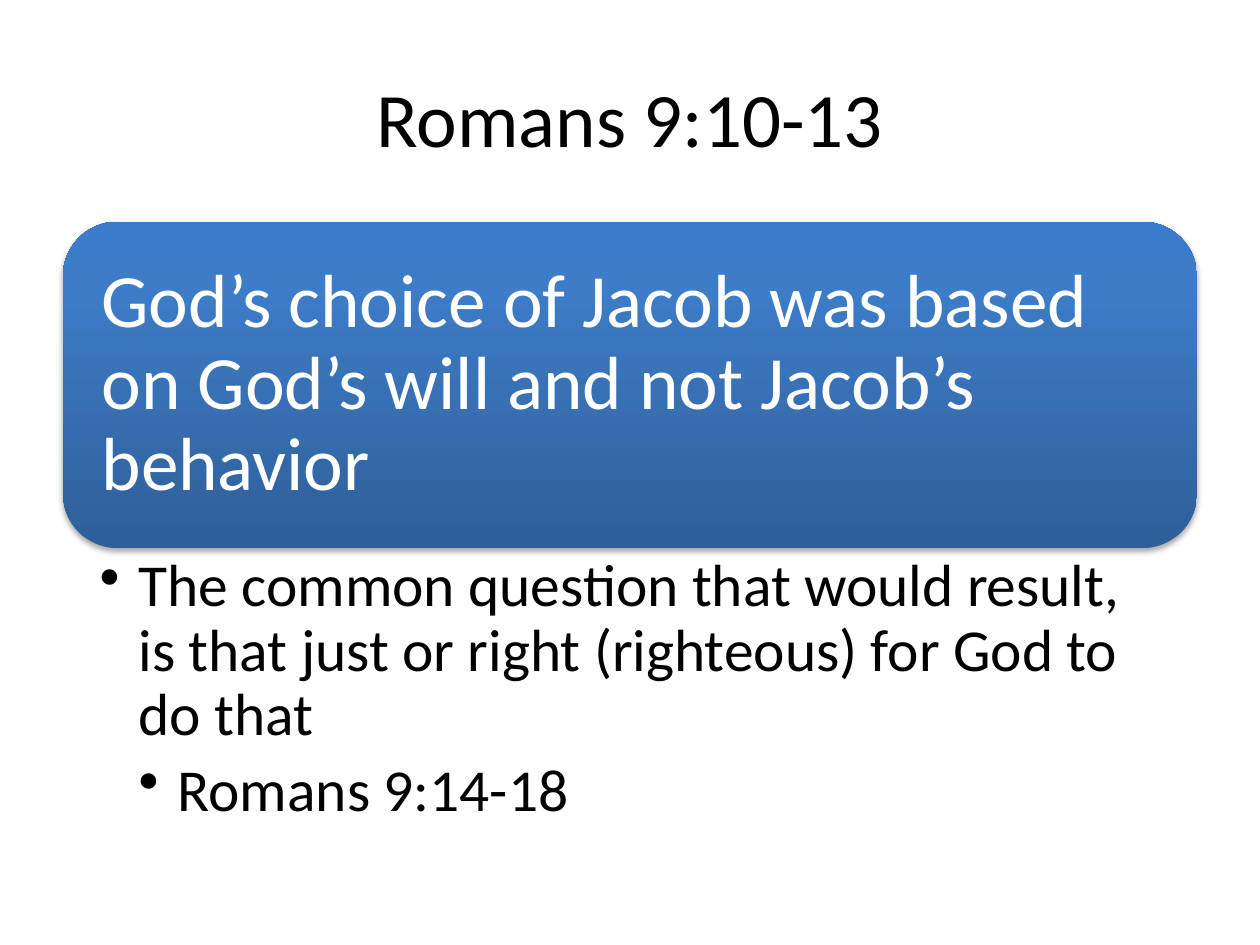
import dataclasses

import lxml.etree
import pptx
import pptx.dml.color
import pptx.enum.shapes
import pptx.enum.text
import pptx.oxml
import pptx.oxml.ns
import pptx.util

Inches, Pt = pptx.util.Inches, pptx.util.Pt
ANCHOR = pptx.enum.text.MSO_ANCHOR
ALIGN = pptx.enum.text.PP_ALIGN
NS = pptx.oxml.ns.nsdecls("a")


@dataclasses.dataclass(frozen=True)
class Theme:
    font: str = "Calibri"
    ink: str = "000000"
    paper: str = "FFFFFF"
    panel_stops: tuple = ((0, "2F5F99"), (80, "3D7CC7"), (100, "3A7CCB"))
    title_size: int = 44
    panel_size: int = 43
    bullet_size: int = 34


def write(p, text, *, font, size, color, align=ALIGN.LEFT, line=None, after=0):
    p.alignment = align
    p.line_spacing = line
    p.space_before, p.space_after = Pt(0), Pt(after)
    r = p.add_run()
    r.text = text
    r.font.name, r.font.size = font, Pt(size)
    r.font.color.rgb = pptx.dml.color.RGBColor.from_string(color)


class Deck:
    """Holds the theme and the current slide; boxes are shares of the slide."""

    def __init__(self, theme):
        self.theme = theme
        self.prs = pptx.Presentation()
        self.prs.slide_width, self.prs.slide_height = Inches(10), Inches(7.5)

    def box(self, x, y, w, h):
        width, height = self.prs.slide_width, self.prs.slide_height
        return [round(n) for n in (x * width, y * height, w * width, h * height)]

    def frame(self, sp, anchor, left, top, right, bottom):
        tf = sp.text_frame
        tf.word_wrap = True
        tf.vertical_anchor = anchor
        tf.margin_left, tf.margin_top = Inches(left), Inches(top)
        tf.margin_right, tf.margin_bottom = Inches(right), Inches(bottom)
        return tf

    def titled_slide(self, text, box):
        t = self.theme
        self.s = self.prs.slides.add_slide(self.prs.slide_layouts[5])
        fill = self.s.background.fill
        fill.solid()
        fill.fore_color.rgb = pptx.dml.color.RGBColor.from_string(t.paper)
        sp = self.s.shapes.title
        sp.left, sp.top, sp.width, sp.height = self.box(*box)
        tf = self.frame(sp, ANCHOR.MIDDLE, 0.1, 0.05, 0.1, 0.05)
        write(tf.paragraphs[0], text, font=t.font, size=t.title_size,
              color=t.ink, align=ALIGN.CENTER)

    def panel(self, text, box):
        """Rounded box with an upward gradient and a soft shadow."""
        t = self.theme
        sp = self.s.shapes.add_shape(
            pptx.enum.shapes.MSO_SHAPE.ROUNDED_RECTANGLE, *self.box(*box))
        sp.shadow.inherit = False
        sp.line.fill.background()
        stops = "".join(
            f'<a:gs pos="{pos * 1000}"><a:srgbClr val="{color}"/></a:gs>'
            for pos, color in t.panel_stops)
        sp_pr = sp.fill._xPr
        sp_pr.find(pptx.oxml.ns.qn("a:prstGeom")).addnext(pptx.oxml.parse_xml(
            f'<a:gradFill {NS} rotWithShape="1"><a:gsLst>{stops}</a:gsLst>'
            '<a:lin ang="16200000" scaled="0"/></a:gradFill>'))
        sp_pr.find(pptx.oxml.ns.qn("a:effectLst")).append(pptx.oxml.parse_xml(
            f'<a:outerShdw {NS} blurRad="{Pt(3.1)}" dist="{Pt(1.8)}" '
            'dir="5400000" rotWithShape="0"><a:srgbClr val="000000">'
            '<a:alpha val="35000"/></a:srgbClr></a:outerShdw>'))
        tf = self.frame(sp, ANCHOR.MIDDLE, 0.18, 0.18, 0.18, 0.18)
        write(tf.paragraphs[0], text, font=t.font, size=t.panel_size,
              color=t.paper, line=0.9)

    def bullets(self, items, box, indent=0.31):
        t = self.theme
        sp = self.s.shapes.add_textbox(*self.box(*box))
        tf = self.frame(sp, ANCHOR.TOP, 0.29, 0.06, 0.33, 0.06)
        for i, (level, text) in enumerate(items):
            p = tf.add_paragraph() if i else tf.paragraphs[0]
            p.level = level
            write(p, text, font=t.font, size=t.bullet_size, color=t.ink,
                  line=0.9, after=0.2 * t.bullet_size)
            p_pr = p._p.get_or_add_pPr()
            p_pr.set("marL", str(Inches(indent * level)))
            p_pr.set("indent", str(Inches(-indent)))
            lxml.etree.SubElement(
                p_pr, pptx.oxml.ns.qn("a:buChar")).set("char", "•")


def main():
    deck = Deck(Theme())
    left, width = 0.05, 0.9
    panel_top, panel_height, list_height = 1.76 / 7.5, 2.59 / 7.5, 2.34 / 7.5
    deck.titled_slide("Romans 9:10-13", (left, 0.04, width, 1.25 / 7.5))
    deck.panel("God’s choice of Jacob was based on God’s will and not "
               "Jacob’s behavior", (left, panel_top, width, panel_height))
    deck.bullets(
        [(1, "The common question that would result, is that just or right "
             "(righteous) for God to do that"),
         (2, "Romans 9:14-18")],
        (left, panel_top + panel_height, width, list_height))
    deck.prs.save("out.pptx")


if __name__ == "__main__":
    main()
